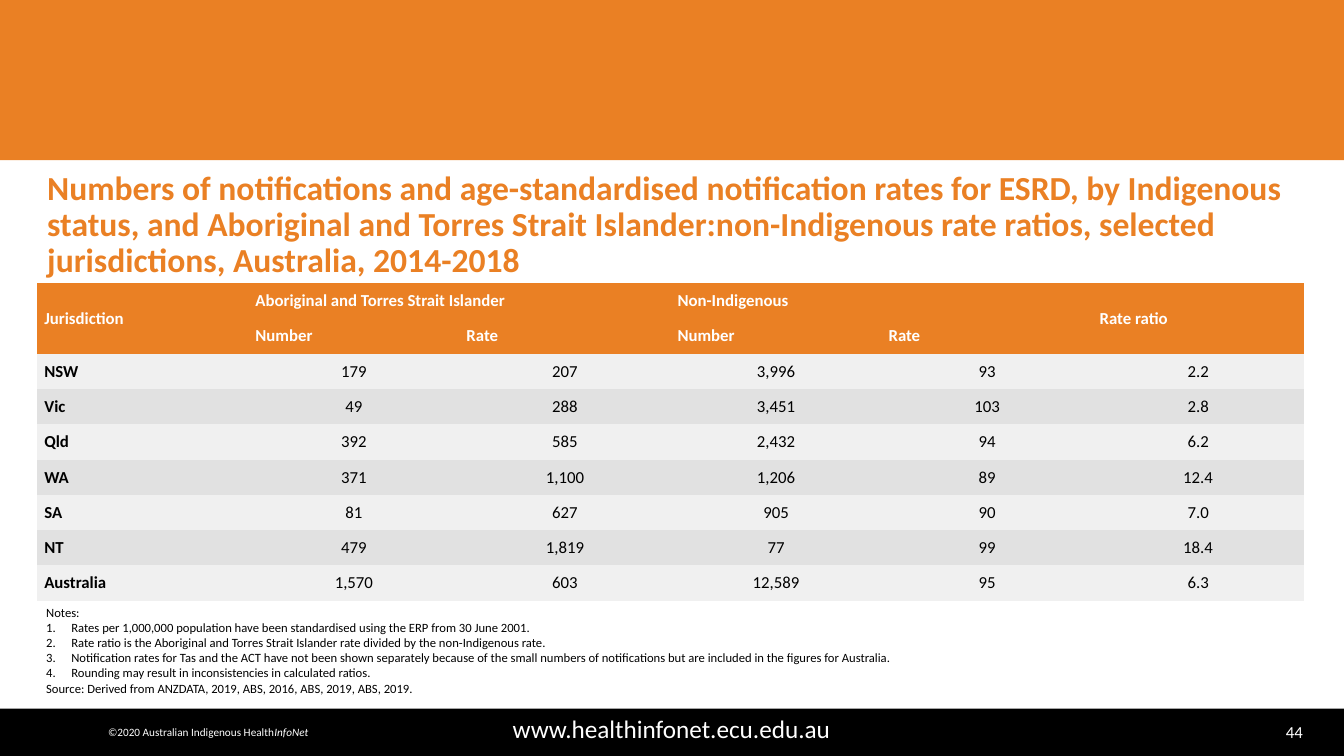
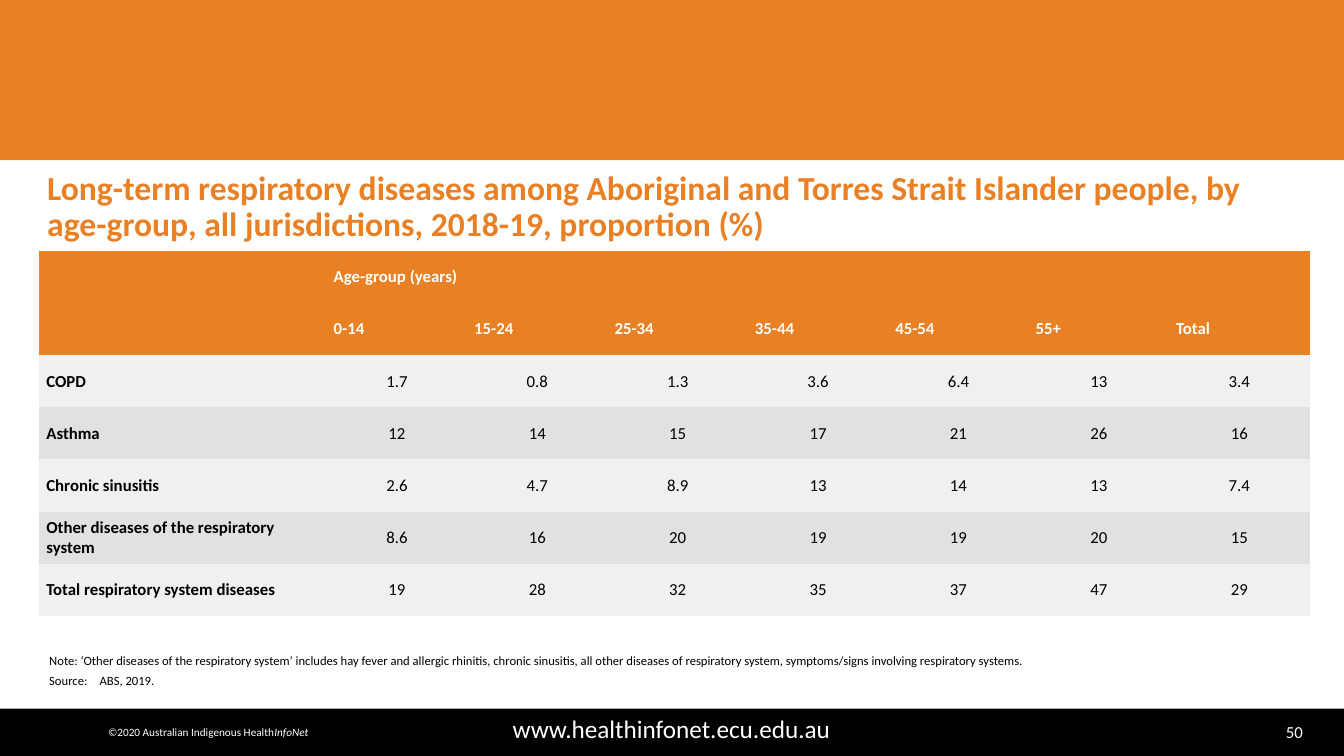
from collections import namedtuple

from lxml.etree import SubElement
from pptx import Presentation
from pptx.dml.color import RGBColor
from pptx.enum.shapes import MSO_SHAPE
from pptx.enum.text import MSO_ANCHOR, PP_ALIGN
from pptx.oxml.ns import qn
from pptx.util import Inches, Pt

ORANGE = RGBColor(0xEA, 0x80, 0x24)
BLACK = RGBColor(0x00, 0x00, 0x00)
WHITE = RGBColor(0xFF, 0xFF, 0xFF)
ROW_FILLS = (RGBColor(0xF0, 0xF0, 0xF0), RGBColor(0xE1, 0xE1, 0xE1))
FONT = "Calibri"
PLAIN_TABLE_STYLE = "{2D5ABB26-0587-4C30-8999-92F81FD0307C}"
HEADER_ROWS = 2

Box = namedtuple("Box", "left top width height")


def inch_box(left, top, width, height):
    """Return a box from lengths in inches."""
    return Box(Inches(left), Inches(top), Inches(width), Inches(height))


TOP_BAND = inch_box(-0.03, 0, 13.36, 1.59)
FOOTER_BAND = inch_box(0, 7.03, 13.33, 0.47)
TITLE_BOX = inch_box(0.37, 1.65, 12.6, 0.84)

KIDNEY_TITLE = (
    "Numbers of notifications and age-standardised notification rates for ESRD, by Indigenous "
    "status, and Aboriginal and Torres Strait Islander:non-Indigenous rate ratios, selected "
    "jurisdictions, Australia, 2014-2018"
)
KIDNEY_ROWS = [
    ["Jurisdiction", "Aboriginal and Torres Strait Islander", "", "Non-Indigenous", "", "Rate ratio"],
    ["", "Number", "Rate", "Number", "Rate", ""],
    ["NSW", "179", "207", "3,996", "93", "2.2"],
    ["Vic", "49", "288", "3,451", "103", "2.8"],
    ["Qld", "392", "585", "2,432", "94", "6.2"],
    ["WA", "371", "1,100", "1,206", "89", "12.4"],
    ["SA", "81", "627", "905", "90", "7.0"],
    ["NT", "479", "1,819", "77", "99", "18.4"],
    ["Australia", "1,570", "603", "12,589", "95", "6.3"],
]
KIDNEY_MERGES = [((0, 0), (1, 0)), ((0, 1), (0, 2)), ((0, 3), (0, 4)), ((0, 5), (1, 5))]
KIDNEY_NOTES = [
    "Rates per 1,000,000 population have been standardised using the ERP from 30 June 2001.",
    "Rate ratio is the Aboriginal and Torres Strait Islander rate divided by the non-Indigenous rate.",
    "Notification rates for Tas and the ACT have not been shown separately because of the small "
    "numbers of notifications but are included in the figures for Australia.",
    "Rounding may result in inconsistencies in calculated ratios.",
]
KIDNEY_SOURCE = "Source: Derived from ANZDATA, 2019, ABS, 2016, ABS, 2019, ABS, 2019."

RESPIRATORY_TITLE = (
    "Long-term respiratory diseases among Aboriginal and Torres Strait Islander people, by "
    "age-group, all jurisdictions, 2018-19, proportion (%)"
)
RESPIRATORY_ROWS = [
    ["", "Age-group (years)", "", "", "", "", "", ""],
    ["", "0-14", "15-24", "25-34", "35-44", "45-54", "55+", "Total"],
    ["COPD", "1.7", "0.8", "1.3", "3.6", "6.4", "13", "3.4"],
    ["Asthma", "12", "14", "15", "17", "21", "26", "16"],
    ["Chronic sinusitis", "2.6", "4.7", "8.9", "13", "14", "13", "7.4"],
    ["Other diseases of the respiratory system", "8.6", "16", "20", "19", "19", "20", "15"],
    ["Total respiratory system diseases", "19", "28", "32", "35", "37", "47", "29"],
]
RESPIRATORY_MERGES = [((0, 0), (1, 0)), ((0, 1), (0, 6))]
RESPIRATORY_NOTES = [
    "Note: ‘Other diseases of the respiratory system’ includes hay fever and allergic rhinitis, "
    "chronic sinusitis, all other diseases of respiratory system, symptoms/signs involving "
    "respiratory systems.",
    "Source:\tABS, 2019.",
]


def add_run(paragraph, text, size, color, bold=False, italic=False):
    """Append one formatted run to a paragraph."""
    run = paragraph.add_run()
    run.text = text
    font = run.font
    font.name, font.size, font.bold, font.italic = FONT, Pt(size), bold, italic
    font.color.rgb = color


def add_text_frame(slide, box, anchor=MSO_ANCHOR.TOP, wrap=True):
    """Add a text box and return its text frame."""
    frame = slide.shapes.add_textbox(*box).text_frame
    frame.word_wrap = wrap
    frame.vertical_anchor = anchor
    return frame


def add_band(slide, box, color):
    """Add a plain rectangle across the slide."""
    shape = slide.shapes.add_shape(MSO_SHAPE.RECTANGLE, *box)
    shape.shadow.inherit = False
    shape.fill.solid()
    shape.fill.fore_color.rgb = color
    shape.line.fill.background()


def add_footer(slide, box, number):
    """Place the black band with copyright, web address and slide number."""
    add_band(slide, box, BLACK)
    items = [
        (0.92, 0.11, 2.29, 0.24, PP_ALIGN.CENTER, False, 8,
         [("©2020 Australian Indigenous Health", False), ("InfoNet", True)]),
        (0.62, 0, 12.08, 0.39, PP_ALIGN.CENTER, True, 18, [("www.healthinfonet.ecu.edu.au", False)]),
        (11.95, 0.08, 1.07, 0.3, PP_ALIGN.RIGHT, True, 12, [(str(number), False)]),
    ]
    for left, top, width, height, alignment, wrap, size, runs in items:
        item_box = Box(box.left + Inches(left), box.top + Inches(top), Inches(width), Inches(height))
        paragraph = add_text_frame(slide, item_box, MSO_ANCHOR.MIDDLE, wrap).paragraphs[0]
        paragraph.alignment = alignment
        for text, italic in runs:
            add_run(paragraph, text, size, WHITE, italic=italic)


def add_title(slide, box, text):
    """Place the orange slide title."""
    paragraph = add_text_frame(slide, box).paragraphs[0]
    paragraph.line_spacing = 0.9
    add_run(paragraph, text, 24, ORANGE, bold=True)


def fill_cell(cell, text, row_index, column_index):
    """Format one table cell by its place in the table."""
    is_header = row_index < HEADER_ROWS
    cell.fill.solid()
    cell.fill.fore_color.rgb = ORANGE if is_header else ROW_FILLS[(row_index - HEADER_ROWS) % 2]
    cell.vertical_anchor = MSO_ANCHOR.MIDDLE
    cell.margin_left = cell.margin_right = Inches(0.07)
    cell.margin_top = cell.margin_bottom = 0
    if text:
        is_label = is_header or column_index == 0
        paragraph = cell.text_frame.paragraphs[0]
        paragraph.alignment = PP_ALIGN.LEFT if is_label else PP_ALIGN.CENTER
        paragraph.space_after = Pt(5)
        add_run(paragraph, text, 12, WHITE if is_header else BLACK, bold=is_label)


def add_data_table(slide, box, rows, merges, label_width):
    """Place a table with two header rows, a label column and equal value columns."""
    column_count = len(rows[0])
    graphic_frame = slide.shapes.add_table(len(rows), column_count, *box)
    for style in graphic_frame._element.iter(qn("a:tableStyleId")):
        style.text = PLAIN_TABLE_STYLE
    table = graphic_frame.table
    table.first_row = table.horz_banding = False
    for column_index, column in enumerate(table.columns):
        column.width = label_width if column_index == 0 else (box.width - label_width) // (column_count - 1)
    for row_index, values in enumerate(rows):
        table.rows[row_index].height = box.height // len(rows)
        for column_index, text in enumerate(values):
            fill_cell(table.cell(row_index, column_index), text, row_index, column_index)
    for first, last in merges:
        table.cell(*first).merge(table.cell(*last))


def add_notes(slide, box, lines, space_after=0):
    """Place the small print; each line is a text and whether it is numbered."""
    frame = add_text_frame(slide, box)
    for index, (text, numbered) in enumerate(lines):
        paragraph = frame.paragraphs[0] if index == 0 else frame.add_paragraph()
        properties = paragraph._p.get_or_add_pPr()
        if numbered:
            properties.set("marL", str(Inches(0.25)))
            properties.set("indent", str(Inches(-0.25)))
            SubElement(properties, qn("a:buFont"), typeface="+mj-lt")
            SubElement(properties, qn("a:buAutoNum"), type="arabicPeriod")
        tabs = SubElement(properties, qn("a:tabLst"))
        for position in (0.5, 0.65):
            SubElement(tabs, qn("a:tab"), pos=str(Inches(position)), algn="l")
        paragraph.space_after = Pt(space_after)
        add_run(paragraph, text, 9, BLACK)


def add_base_slide(presentation, title, number):
    """Add a blank slide with the shared bands, footer and title."""
    slide = presentation.slides.add_slide(presentation.slide_layouts[6])
    add_band(slide, TOP_BAND, ORANGE)
    add_footer(slide, FOOTER_BAND, number)
    add_title(slide, TITLE_BOX, title)
    return slide


def add_kidney_slide(presentation):
    """Build the slide on kidney disease notifications."""
    slide = add_base_slide(presentation, KIDNEY_TITLE, 44)
    table_box = inch_box(0.37, 2.81, 12.56, 3.15)
    add_data_table(slide, table_box, KIDNEY_ROWS, KIDNEY_MERGES, table_box.width // 6)
    lines = [("Notes:", False), *((note, True) for note in KIDNEY_NOTES), (KIDNEY_SOURCE, False)]
    add_notes(slide, inch_box(0.36, 5.95, 12.6, 1.03), lines)


def add_respiratory_slide(presentation):
    """Build the slide on respiratory diseases by age-group."""
    slide = add_base_slide(presentation, RESPIRATORY_TITLE, 50)
    table_box = inch_box(0.39, 2.49, 12.6, 3.62)
    add_data_table(slide, table_box, RESPIRATORY_ROWS, RESPIRATORY_MERGES, Inches(2.85))
    lines = [(note, False) for note in RESPIRATORY_NOTES]
    add_notes(slide, inch_box(0.39, 6.43, 12.6, 0.45), lines, space_after=3)


def main():
    """Build and save the presentation."""
    presentation = Presentation()
    presentation.slide_width = Inches(13.33)
    presentation.slide_height = Inches(7.5)
    add_kidney_slide(presentation)
    add_respiratory_slide(presentation)
    presentation.save("out.pptx")


if __name__ == "__main__":
    main()
